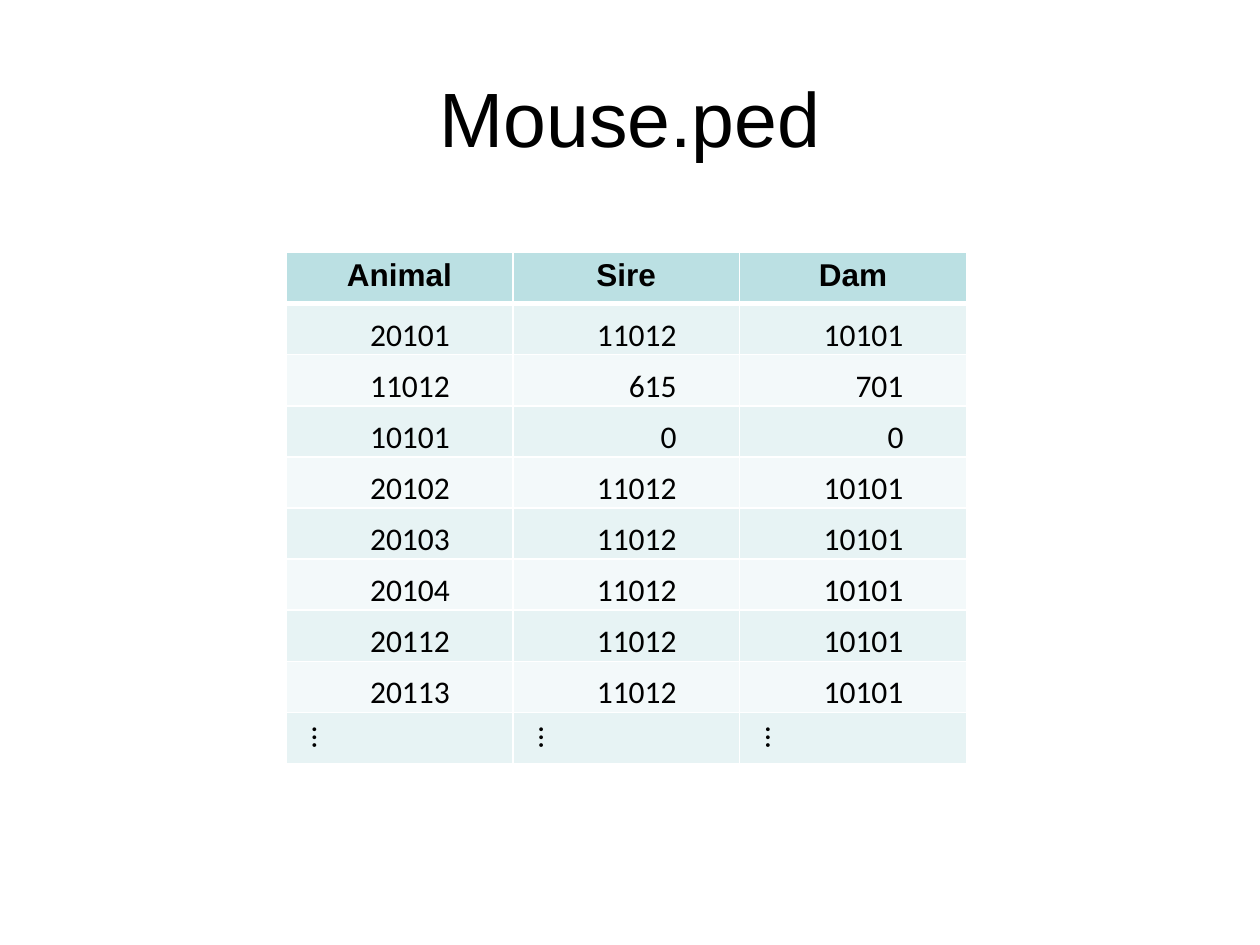
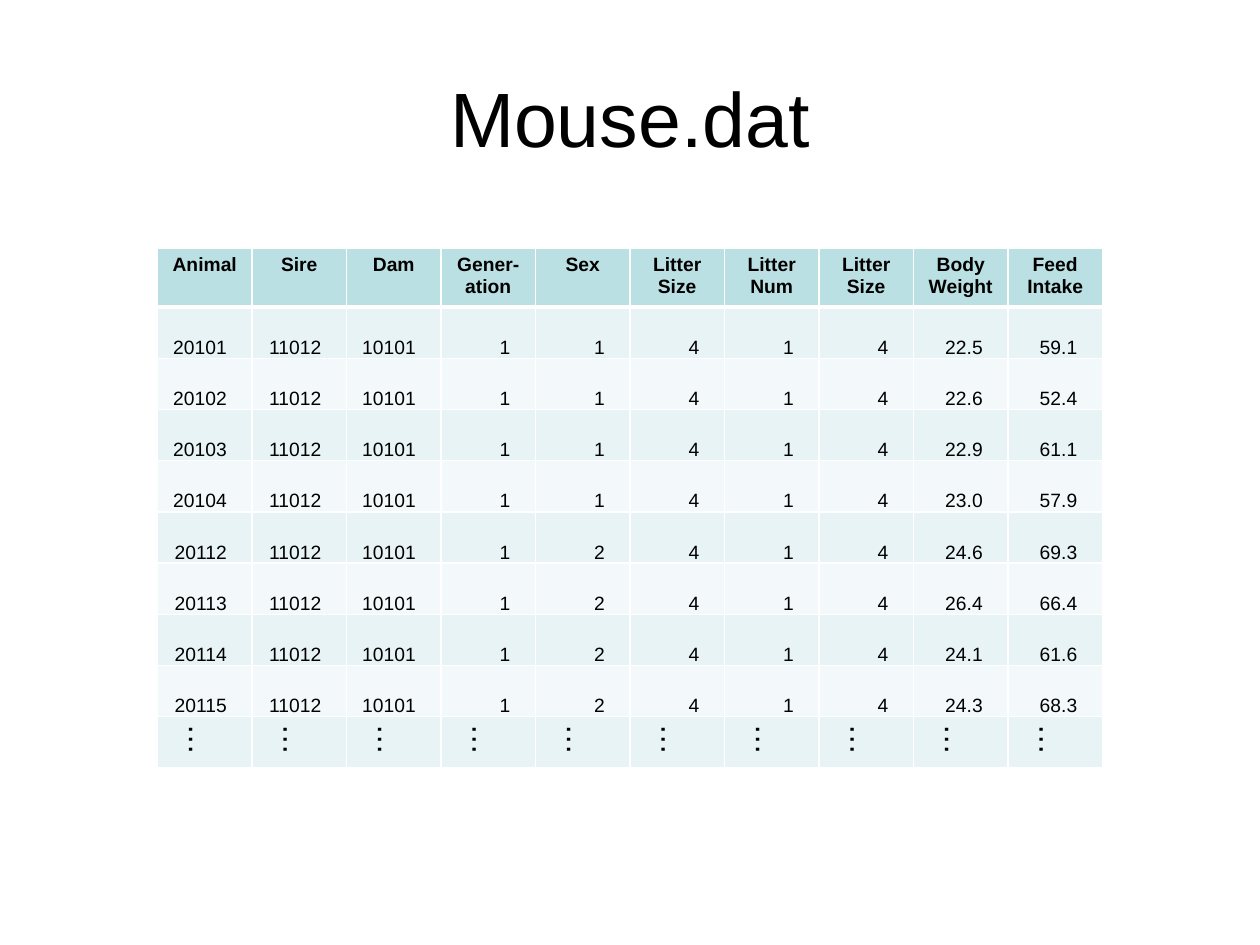
from dataclasses import dataclass
from lxml.etree import SubElement
from pptx import Presentation
from pptx.dml.color import RGBColor as Color
from pptx.enum.text import MSO_ANCHOR as Anchor, PP_ALIGN as Align
from pptx.oxml.ns import qn
from pptx.util import Inches, Pt

ELLIPSIS = "…"
PARENTS = ("11012", "10101")

PEDIGREE = [
    ("20101", *PARENTS),
    ("11012", "615", "701"),
    ("10101", "0", "0"),
    *[(animal, *PARENTS) for animal in ("20102", "20103", "20104", "20112", "20113")],
]

MEASUREMENTS = [
    ("20101", "1", "22.5", "59.1"),
    ("20102", "1", "22.6", "52.4"),
    ("20103", "1", "22.9", "61.1"),
    ("20104", "1", "23.0", "57.9"),
    ("20112", "2", "24.6", "69.3"),
    ("20113", "2", "26.4", "66.4"),
    ("20114", "2", "24.1", "61.6"),
    ("20115", "2", "24.3", "68.3"),
]

SLIDES = [
    {
        "title": "Mouse.ped",
        "header": ["Animal", "Sire", "Dam"],
        "records": PEDIGREE,
        "left": 2.27, "top": 2, "column": 1.8, "header_height": 0.41,
        "size": 18, "body_font": "Calibri",
        "body_insets": (0.5, 0, 0.5, 0), "ellipsis_insets": (0.5, 0, 0.5, 0),
    },
    {
        "title": "Mouse.dat",
        "header": ["Animal", "Sire", "Dam", "Gener-\nation", "Sex", "Litter\nSize",
                   "Litter\nNum", "Litter\nSize", "Body\nWeight", "Feed\nIntake"],
        "records": [(animal, *PARENTS, "1", sex, "4", "1", "4", weight, intake)
                    for animal, sex, weight, intake in MEASUREMENTS],
        "left": 1.25, "top": 1.97, "column": 0.75, "header_height": 0.43,
        "size": 11, "body_font": "Arial",
        "body_insets": (0.01, 0, 0.2, 0), "ellipsis_insets": (0.1, 0.05, 0.1, 0.05),
    },
]


@dataclass(frozen=True)
class Theme:
    width: float = 10
    height: float = 7.5
    text: str = "000000"
    border: str = "FFFFFF"
    header: str = "BBE0E3"
    bands: tuple = ("E7F3F4", "F3F9FA")
    font: str = "Arial"
    title_size: int = 44
    ellipsis_size: int = 18
    thin: int = 1
    thick: int = 3
    table_bottom: float = 6.06


THEME = Theme()


def apply(target, values):
    for name, value in values.items():
        setattr(target, name, value)


def write(frame, text, align, size, font, bold=False):
    frame.text = text
    for paragraph in frame.paragraphs:
        paragraph.alignment = align
        for run in paragraph.runs:
            apply(run.font, {"size": Pt(size), "name": font, "bold": bold})
            run.font.color.rgb = Color.from_string(THEME.text)


def add_title(slide, text):
    margin = THEME.width / 20
    box = slide.shapes.add_textbox(Inches(margin), Inches(THEME.height / 25),
                                   Inches(THEME.width - 2 * margin), Inches(THEME.height / 6))
    apply(box.text_frame, {"word_wrap": True, "vertical_anchor": Anchor.MIDDLE})
    write(box.text_frame, text, Align.CENTER, THEME.title_size, THEME.font)


def draw_borders(cell, top, bottom):
    properties = cell._tc.get_or_add_tcPr()
    for side, width in {"L": THEME.thin, "R": THEME.thin, "T": top, "B": bottom}.items():
        line = SubElement(properties, qn(f"a:ln{side}"), w=str(Pt(width)))
        fill = SubElement(line, qn("a:solidFill"))
        SubElement(fill, qn("a:srgbClr"), val=THEME.border)


def format_cell(cell, text, color, anchor, insets, top, bottom, vertical=False, **text_format):
    draw_borders(cell, top, bottom)
    cell.fill.solid()
    cell.fill.fore_color.rgb = Color.from_string(color)
    sides = ("margin_left", "margin_top", "margin_right", "margin_bottom")
    apply(cell, {"vertical_anchor": anchor, **dict(zip(sides, map(Inches, insets)))})
    if vertical:
        cell._tc.get_or_add_tcPr().set("vert", "vert270")
    write(cell.text_frame, text, **text_format)


def add_data_table(slide, content):
    columns = len(content["header"])
    rows = [content["header"], *content["records"], [ELLIPSIS] * columns]
    last = len(rows) - 1
    height = THEME.table_bottom - content["top"]
    body_height = (height - content["header_height"]) / last
    table = slide.shapes.add_table(len(rows), columns, Inches(content["left"]), Inches(content["top"]),
                                   Inches(columns * content["column"]), Inches(height)).table
    apply(table, {"first_row": False, "horz_banding": False})
    for column in table.columns:
        column.width = Inches(content["column"])

    header = {"anchor": Anchor.TOP, "insets": (0.1, 0.05, 0.1, 0.05), "align": Align.CENTER,
              "size": content["size"], "font": THEME.font, "bold": True}
    body = {"anchor": Anchor.BOTTOM, "insets": content["body_insets"], "align": Align.RIGHT,
            "size": content["size"], "font": content["body_font"]}
    ellipsis = {**body, "anchor": Anchor.MIDDLE, "insets": content["ellipsis_insets"],
                "align": Align.CENTER, "size": THEME.ellipsis_size, "vertical": True}

    for index, texts in enumerate(rows):
        table.rows[index].height = Inches(body_height if index else content["header_height"])
        style = {0: header, last: ellipsis}.get(index, body)
        color = THEME.bands[(index - 1) % 2] if index else THEME.header
        top = THEME.thick if index == 1 else THEME.thin
        bottom = THEME.thick if index == 0 else THEME.thin
        for position, text in enumerate(texts):
            format_cell(table.cell(index, position), text, color, top=top, bottom=bottom, **style)


def main():
    presentation = Presentation()
    apply(presentation, {"slide_width": Inches(THEME.width), "slide_height": Inches(THEME.height)})
    for content in SLIDES:
        slide = presentation.slides.add_slide(presentation.slide_layouts[6])
        add_title(slide, content["title"])
        add_data_table(slide, content)
    presentation.save("out.pptx")


if __name__ == "__main__":
    main()
